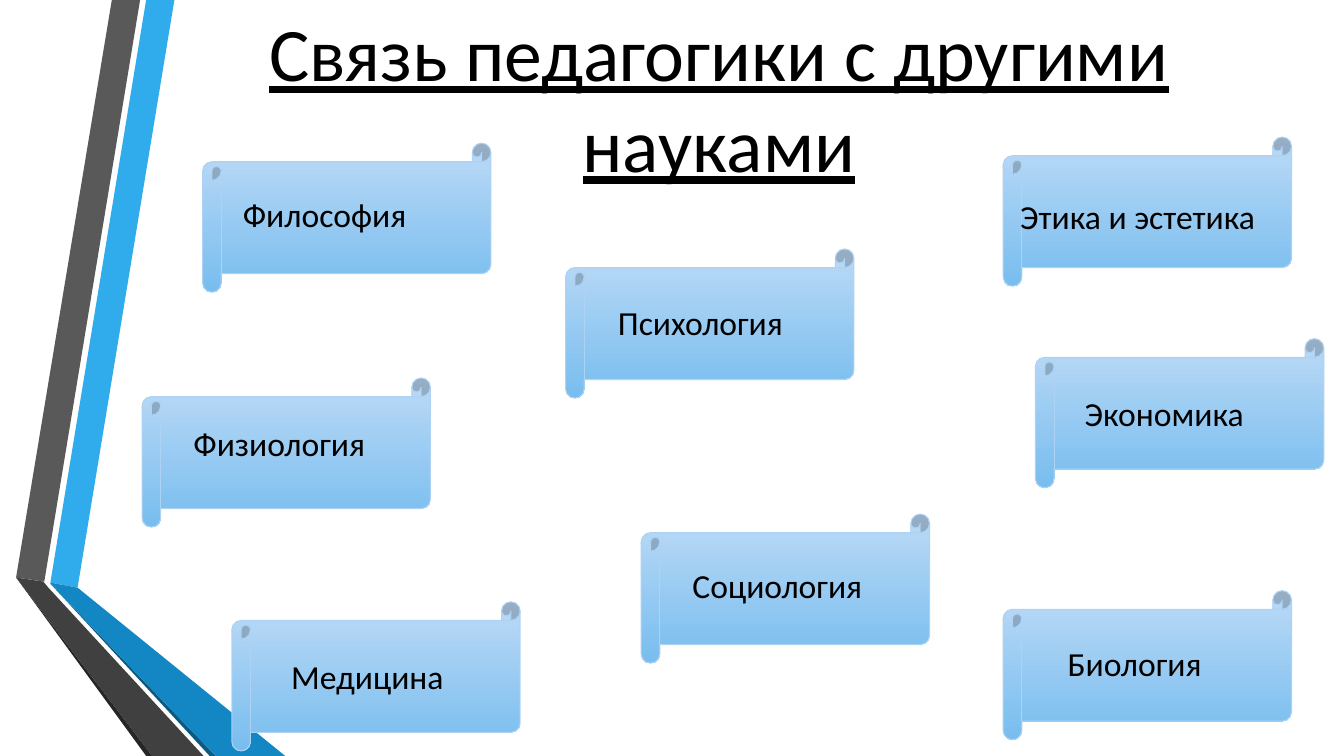
from dataclasses import dataclass

from pptx import Presentation
from pptx.dml.color import RGBColor
from pptx.enum.shapes import MSO_SHAPE
from pptx.enum.text import MSO_ANCHOR, PP_ALIGN
from pptx.util import Inches, Pt

SCROLL = MSO_SHAPE.HORIZONTAL_SCROLL
MIDDLE, TOP = MSO_ANCHOR.MIDDLE, MSO_ANCHOR.TOP
CENTER, LEFT = PP_ALIGN.CENTER, PP_ALIGN.LEFT


@dataclass(frozen=True)
class Theme:
    font: str = "Calibri"
    title_size: int = 54
    label_size: int = 24
    text: str = "000000"
    scroll_top: str = "BCDAF6"
    scroll_bottom: str = "78BDEF"
    scroll_line: str = "AED2F4"
    blue: str = "30ACEC"
    blue_fold: str = "1287C3"
    blue_edge: str = "0C5A82"
    grey: str = "595959"
    grey_fold: str = "404040"
    grey_edge: str = "262626"


theme = Theme()


def rgb(value):
    return RGBColor.from_string(value)


def add_text(page, text, place, size, align, anchor, underline=False):
    box = page.shapes.add_textbox(*(Inches(length) for length in place))
    frame = box.text_frame
    frame.word_wrap = True
    frame.vertical_anchor = anchor
    para = frame.paragraphs[0]
    para.alignment = align
    span = para.add_run()
    span.text = text
    span.font.name = theme.font
    span.font.size = Pt(size)
    span.font.underline = underline
    span.font.color.rgb = rgb(theme.text)


deck = Presentation()
deck.slide_width, deck.slide_height = Inches(13.33), Inches(7.5)
page = deck.slides.add_slide(deck.slide_layouts[6])

# Folded ribbons on the left edge
ribbons = [
    (theme.blue, [(0.5, 5.78), (0.77, 5.83), (1.73, 0), (1.45, 0)]),
    (theme.grey, [(1.39, 0), (1.11, 0), (0.16, 5.73), (0.44, 5.77)]),
    (theme.grey_edge, [(0.16, 5.73), (1.45, 7.5), (1.51, 7.5)]),
    (theme.blue_edge, [(0.5, 5.79), (2.08, 7.5), (2.14, 7.5)]),
    (theme.blue_fold, [(0.5, 5.78), (0.5, 5.79), (2.14, 7.5), (2.83, 7.5), (0.77, 5.83)]),
    (theme.grey_fold, [(2.02, 7.5), (0.48, 5.83), (0.43, 5.77), (0.16, 5.73), (1.51, 7.5)]),
]
for color, corners in ribbons:
    points = [(Inches(x), Inches(y)) for x, y in corners]
    outline = page.shapes.build_freeform(*points[0])
    outline.add_line_segments(points[1:], close=True)
    ribbon = outline.convert_to_shape()
    ribbon.shadow.inherit = False
    ribbon.fill.solid()
    ribbon.fill.fore_color.rgb = rgb(color)
    ribbon.line.fill.background()

# Title
add_text(page, "Связь педагогики с другими науками", (1.65, 0, 10.96, 1.92),
         theme.title_size, CENTER, MIDDLE, underline=True)

# Sciences: name, scroll corner, label corner and width
sciences = [
    ("Философия", (2.01, 1.42), (2.31, 1.87), 2.32),
    ("Социология", (6.36, 5.1), (6.77, 5.56), 2.04),
    ("Физиология", (1.41, 3.75), (1.82, 4.15), 2.07),
    ("Психология", (5.61, 2.47), (6.03, 2.95), 2.12),
    ("Этика и эстетика", (9.95, 1.36), (10.02, 1.89), 2.91),
    ("Медицина", (2.3, 5.97), (2.79, 6.46), 2.18),
    ("Экономика", (10.27, 3.36), (10.66, 3.85), 2.09),
    ("Биология", (9.95, 5.86), (10.49, 6.33), 1.97),
]
for name, (left, top), label_corner, label_width in sciences:
    scroll = page.shapes.add_shape(SCROLL, Inches(left), Inches(top), Inches(2.86), Inches(1.48))
    scroll.shadow.inherit = False
    scroll.fill.gradient()
    scroll.fill.gradient_angle = 270
    for stop, color in zip(scroll.fill.gradient_stops, (theme.scroll_top, theme.scroll_bottom)):
        stop.color.rgb = rgb(color)
    scroll.line.color.rgb = rgb(theme.scroll_line)
    scroll.line.width = Pt(0.75)
    add_text(page, name, (*label_corner, label_width, 0.5), theme.label_size, LEFT, TOP)

deck.save("out.pptx")
